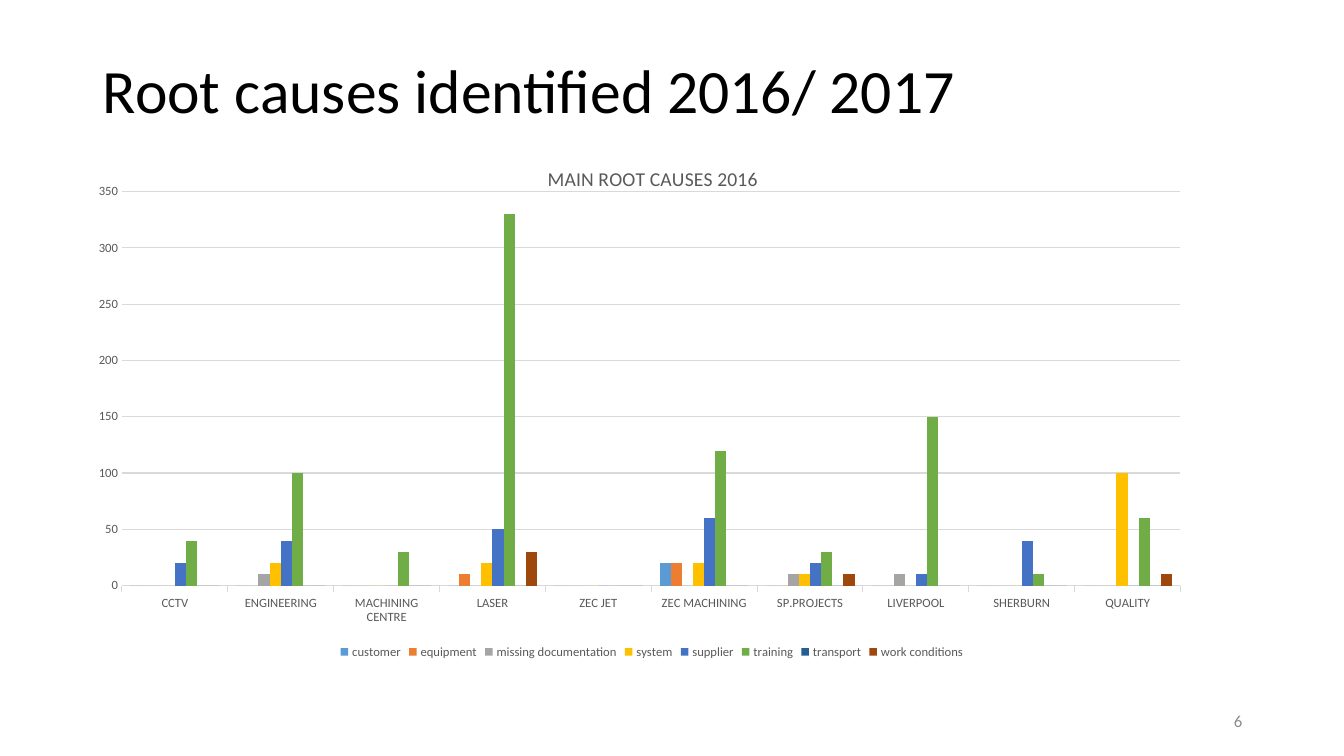
import pptx
import pptx.chart.data
import pptx.dml.color
import pptx.enum.chart
import pptx.enum.text
import pptx.oxml
import pptx.oxml.ns
import pptx.util

Inches = pptx.util.Inches
Pt = pptx.util.Pt

TITLE = "Root causes identified 2016/ 2017"
HEAD = "MAIN ROOT CAUSES 2016"
NUMBER = "6"

SITES = ["CCTV", "ENGINEERING", "MACHINING CENTRE", "LASER", "ZEC JET",
         "ZEC MACHINING", "SP.PROJECTS", "LIVERPOOL", "SHERBURN", "QUALITY"]

# cause, colour, count at each site to the nearest ten
CAUSES = [
    ("customer", "5B9BD5", (0, 0, 0, 0, 0, 20, 0, 0, 0, 0)),
    ("equipment", "ED7D31", (0, 0, 0, 10, 0, 20, 0, 0, 0, 0)),
    ("missing documentation", "A5A5A5", (0, 10, 0, 0, 0, 0, 10, 10, 0, 0)),
    ("system", "FFC000", (0, 20, 0, 20, 0, 20, 10, 0, 0, 100)),
    ("supplier", "4472C4", (20, 40, 0, 50, 0, 60, 20, 10, 40, 0)),
    ("training", "70AD47", (40, 100, 30, 330, 0, 120, 30, 150, 10, 60)),
    ("transport", "255E91", (0, 0, 0, 0, 0, 0, 0, 0, 0, 0)),
    ("work conditions", "9E480E", (0, 0, 0, 30, 0, 0, 10, 0, 0, 10)),
]

THEME = {
    "font": "Calibri",
    "ink": "000000", "label": "595959", "rule": "D9D9D9", "page": "8C8C8C",
    "title": 44, "head": 14, "small": 9, "number": 12, "line": 0.75,
}

# left, top, width, height in inches
TITLE_BOX = (0.92, 0.4, 11.5, 1.05)
CHART_BOX = (0.52, 1.45, 11.89, 5.13)
NUMBER_BOX = (9.42, 6.95, 3, 0.4)

# fractions of the chart area
PLOT = {"x": 0.058, "y": 0.088, "w": 0.883, "h": 0.762}
HEAD_SPOT = {"x": 0.41, "y": 0.03}


def rgb(name):
    return pptx.dml.color.RGBColor.from_string(THEME.get(name, name))


def style(font, size, color):
    font.name = THEME["font"]
    font.size = Pt(THEME[size])
    font.color.rgb = rgb(color)
    font.bold = False


def write(frame, text, size, color, align):
    frame.word_wrap = True
    frame.auto_size = pptx.enum.text.MSO_AUTO_SIZE.NONE
    frame.vertical_anchor = pptx.enum.text.MSO_ANCHOR.MIDDLE
    para = frame.paragraphs[0]
    para.alignment = align
    run = para.add_run()
    run.text = text
    style(run.font, size, color)
    return para


def layout(spot, inner=False):
    """Return a manual chart layout with the given fractions."""
    parts = ['<c:layoutTarget val="inner"/>'] if inner else []
    parts += [f'<c:{key}Mode val="edge"/>' for key in "xy"]
    parts += [f'<c:{key} val="{val}"/>' for key, val in spot.items()]
    space = pptx.oxml.ns.nsdecls("c")
    return pptx.oxml.parse_xml(
        f"<c:layout {space}><c:manualLayout>{''.join(parts)}"
        "</c:manualLayout></c:layout>")


def rule(line):
    line.color.rgb = rgb("rule")
    line.width = Pt(THEME["line"])


def add_title(slide):
    title = slide.shapes.title
    title.left, title.top, title.width, title.height = map(Inches, TITLE_BOX)
    para = write(title.text_frame, TITLE, "title", "ink",
                 pptx.enum.text.PP_ALIGN.LEFT)
    para.line_spacing = 0.9


def add_bars(slide):
    kinds = pptx.enum.chart
    data = pptx.chart.data.CategoryChartData()
    data.categories = SITES
    for name, _, counts in CAUSES:
        data.add_series(name, counts)
    chart = slide.shapes.add_chart(kinds.XL_CHART_TYPE.COLUMN_CLUSTERED,
                                   *map(Inches, CHART_BOX), data).chart
    style(chart.font, "small", "label")

    run = chart.chart_title.text_frame.paragraphs[0].add_run()
    run.text = HEAD
    style(run.font, "head", "label")
    chart.chart_title.include_in_layout = False
    head = chart._chartSpace.chart.find(pptx.oxml.ns.qn("c:title"))
    for old in head.findall(pptx.oxml.ns.qn("c:layout")):
        head.remove(old)
    head.find(pptx.oxml.ns.qn("c:tx")).addnext(layout(HEAD_SPOT))

    area = chart._chartSpace.chart.plotArea
    for old in area.findall(pptx.oxml.ns.qn("c:layout")):
        area.remove(old)
    area.insert(0, layout(PLOT, inner=True))

    plot = chart.plots[0]
    plot.gap_width = 150
    plot.overlap = 0
    plot.vary_by_categories = False
    for bars, (_, color, _) in zip(plot.series, CAUSES):
        bars.format.fill.solid()
        bars.format.fill.fore_color.rgb = rgb(color)

    sites, counts = chart.category_axis, chart.value_axis
    for axis in (sites, counts):
        style(axis.tick_labels.font, "small", "label")
        axis.minor_tick_mark = kinds.XL_TICK_MARK.NONE
    sites.major_tick_mark = kinds.XL_TICK_MARK.OUTSIDE
    rule(sites.format.line)
    counts.major_tick_mark = kinds.XL_TICK_MARK.NONE
    counts.minimum_scale, counts.maximum_scale = 0, 350
    counts.major_unit = 50
    counts.format.line.fill.background()
    rule(counts.major_gridlines.format.line)

    chart.has_legend = True
    chart.legend.position = kinds.XL_LEGEND_POSITION.BOTTOM
    chart.legend.include_in_layout = False
    style(chart.legend.font, "small", "label")


def add_number(slide):
    box = slide.shapes.add_textbox(*map(Inches, NUMBER_BOX))
    write(box.text_frame, NUMBER, "number", "page",
          pptx.enum.text.PP_ALIGN.RIGHT)


def main():
    deck = pptx.Presentation()
    deck.slide_width, deck.slide_height = Inches(13.33), Inches(7.5)
    slide = deck.slides.add_slide(deck.slide_layouts.get_by_name("Title Only"))
    add_title(slide)
    add_number(slide)
    add_bars(slide)
    deck.save("out.pptx")


if __name__ == "__main__":
    main()
